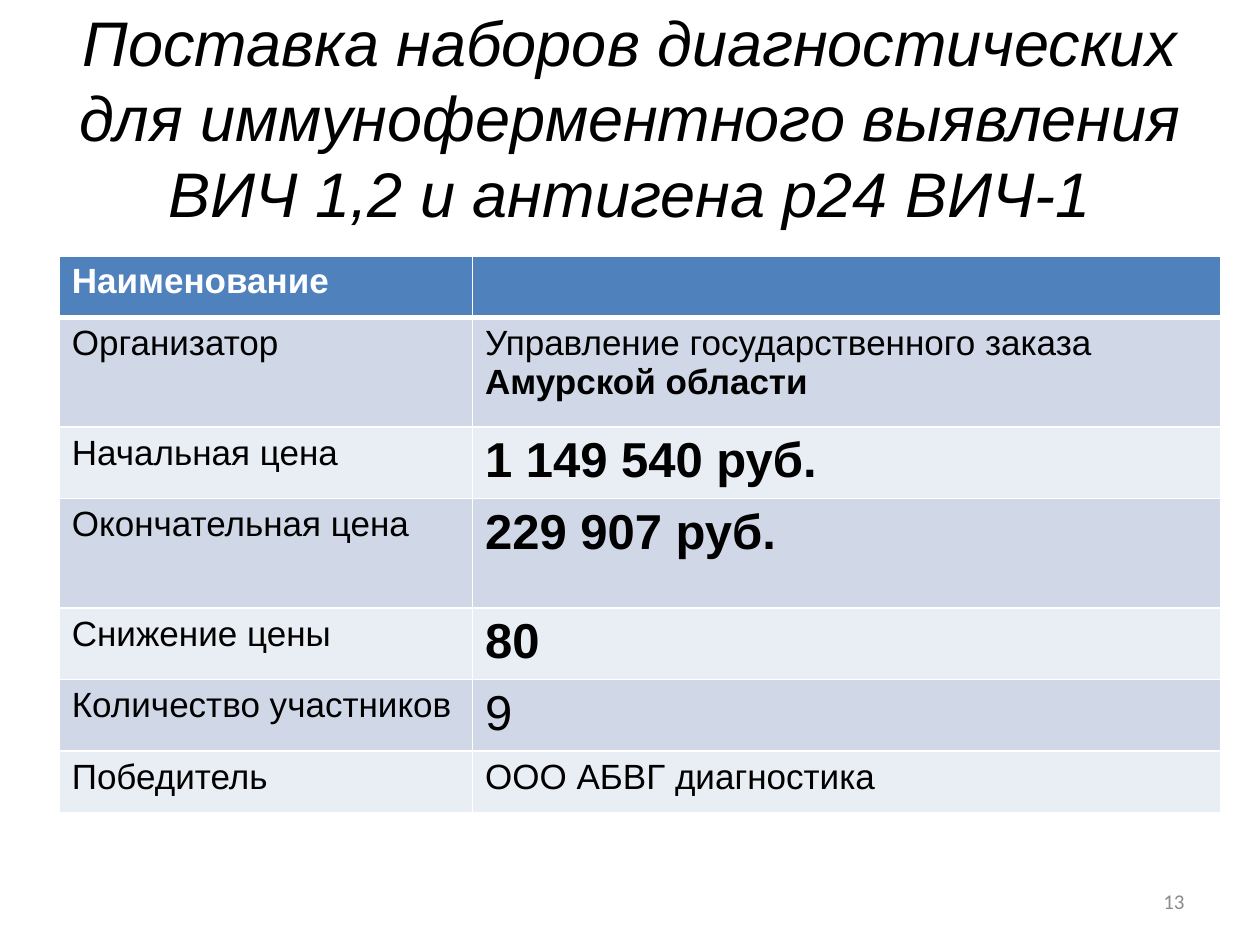
from lxml import etree
from pptx import Presentation
from pptx import util as u
from pptx.dml.color import RGBColor
from pptx.enum import text
from pptx.oxml import ns

BLACK = RGBColor(0x00, 0x00, 0x00)
WHITE = RGBColor(0xFF, 0xFF, 0xFF)
GRAY = RGBColor(0x8C, 0x8C, 0x8C)
HEADER = RGBColor(0x4F, 0x81, 0xBD)
BANDS = (RGBColor(0xD0, 0xD8, 0xE8), RGBColor(0xE9, 0xED, 0xF4))

WIDTH, HEIGHT = 10, 7.5
ROW, TALL_ROW = 0.49, 0.87
COLUMNS = (3.28, 5.94)

BODY = {"name": "Arial", "size": u.Pt(20), "bold": False}
STRONG = {**BODY, "bold": True}
FIGURE = {**BODY, "size": u.Pt(28)}
STRONG_FIGURE = {**FIGURE, "bold": True}
TITLE = {"name": "Arial", "size": u.Pt(36), "italic": True}
NUMBER = {"name": "Calibri", "size": u.Pt(12)}

# Each row: label, value spans with their format, height
ROWS = [
    ("Организатор", [("Управление государственного заказа ", BODY),
                     ("Амурской области", STRONG)], TALL_ROW),
    ("Начальная цена", [("1 149 540 руб.", STRONG_FIGURE)], ROW),
    ("Окончательная цена", [("229 907 руб.", STRONG_FIGURE)], TALL_ROW),
    ("Снижение цены", [("80", STRONG_FIGURE)], ROW),
    ("Количество участников", [("9", FIGURE)], ROW),
    ("Победитель", [("ООО АБВГ диагностика", BODY)], ROW),
]


def add_spans(para, spans, color):
    for words, style in spans:
        span = para.add_run()
        span.text = words
        span.font.color.rgb = color
        for name, value in style.items():
            setattr(span.font, name, value)


def add_text(page, box, words, style, color, align):
    """Place one middle-anchored paragraph in the box."""
    frame = page.shapes.add_textbox(*map(u.Inches, box)).text_frame
    frame.word_wrap = True
    frame.vertical_anchor = text.MSO_ANCHOR.MIDDLE
    para = frame.paragraphs[0]
    para.alignment = align
    add_spans(para, [(words, style)], color)


def set_borders(cell, bottom):
    properties = cell._tc.get_or_add_tcPr()
    for side, points in (("L", 1), ("R", 1), ("T", 1), ("B", bottom)):
        line = etree.SubElement(properties, ns.qn(f"a:ln{side}"), w=str(u.Pt(points)))
        fill = etree.SubElement(line, ns.qn("a:solidFill"))
        etree.SubElement(fill, ns.qn("a:srgbClr"), val=str(WHITE))


def add_purchase_table(page, left, top):
    """Place the header and the banded rows from the given corner."""
    lines = [([("Наименование", STRONG)], [], ROW)]
    lines += [([(label, BODY)], value, height) for label, value, height in ROWS]
    box = (left, top, sum(COLUMNS), sum(line[-1] for line in lines))
    table = page.shapes.add_table(len(lines), len(COLUMNS), *map(u.Inches, box)).table
    for column, width in zip(table.columns, COLUMNS):
        column.width = u.Inches(width)
    for index, (*contents, height) in enumerate(lines):
        table.rows[index].height = u.Inches(height)
        is_header = index == 0
        for cell, spans in zip(table.rows[index].cells, contents):
            set_borders(cell, 3 if is_header else 1)
            cell.fill.solid()
            cell.fill.fore_color.rgb = HEADER if is_header else BANDS[(index - 1) % 2]
            add_spans(cell.text_frame.paragraphs[0], spans, WHITE if is_header else BLACK)


def main():
    deck = Presentation()
    deck.slide_width, deck.slide_height = u.Inches(WIDTH), u.Inches(HEIGHT)
    page = deck.slides.add_slide(deck.slide_layouts[6])
    # Title
    add_text(page, (0.05 * WIDTH, 0.04 * HEIGHT, 0.9 * WIDTH, 1.25),
             "Поставка наборов диагностических для иммуноферментного выявления "
             "ВИЧ 1,2 и антигена р24 ВИЧ-1", TITLE, BLACK, text.PP_ALIGN.CENTER)
    # Purchase details
    add_purchase_table(page, 0.47, 2.03)
    # Slide number
    add_text(page, (7.17, 6.95, 2.33, 0.4), "13", NUMBER, GRAY, text.PP_ALIGN.RIGHT)
    deck.save("out.pptx")


if __name__ == "__main__":
    main()
